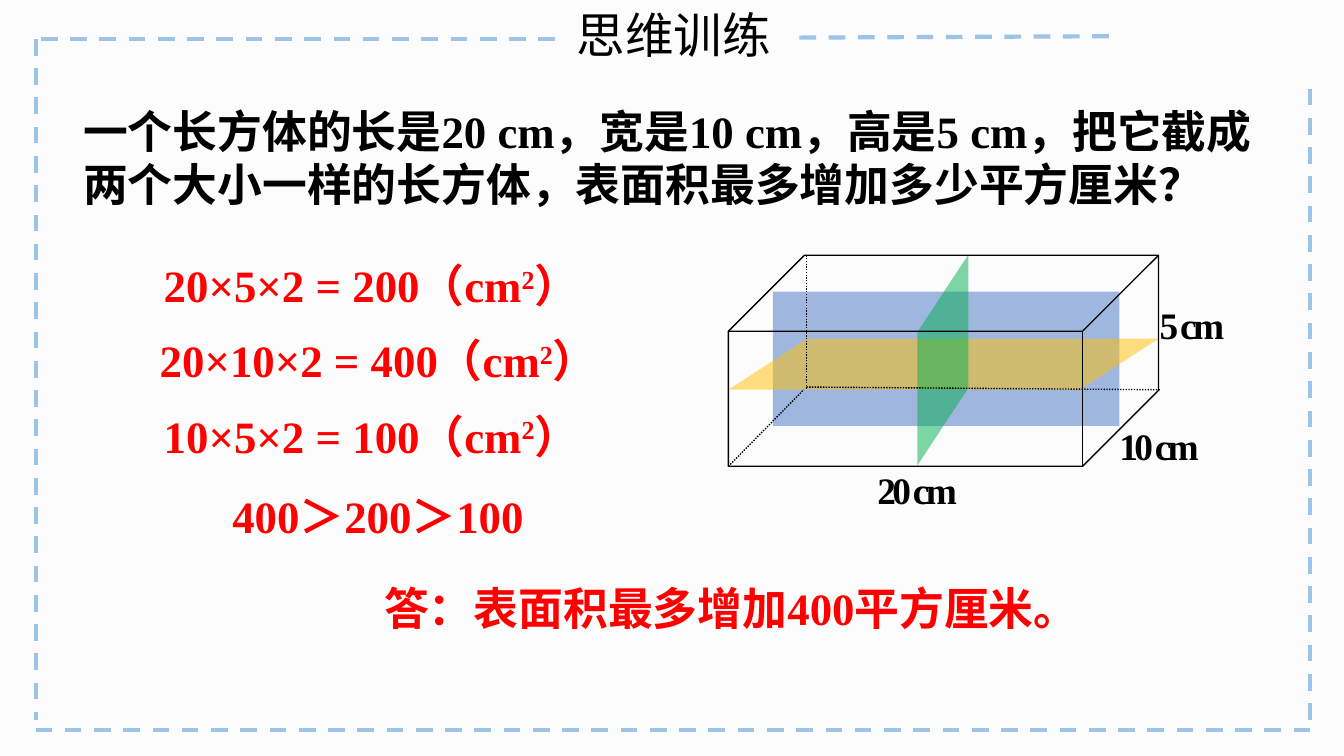
from typing import NamedTuple

from lxml import etree
from pptx import Presentation
from pptx.dml.color import RGBColor
from pptx.enum.dml import MSO_LINE
from pptx.enum.shapes import MSO_CONNECTOR, MSO_SHAPE
from pptx.enum.text import MSO_ANCHOR, MSO_AUTO_SIZE, PP_ALIGN
from pptx.oxml.ns import qn
from pptx.util import Inches, Pt

STRAIGHT = MSO_CONNECTOR.STRAIGHT
DASH, DOT = MSO_LINE.DASH, MSO_LINE.ROUND_DOT
RECT, SLANT, CUBE = MSO_SHAPE.RECTANGLE, MSO_SHAPE.PARALLELOGRAM, MSO_SHAPE.CUBE
TOP, LEFT = MSO_ANCHOR.TOP, PP_ALIGN.LEFT
NO_FIT = MSO_AUTO_SIZE.NONE

BLACK = RGBColor(0, 0, 0)
RED = RGBColor(255, 0, 0)
PAPER = RGBColor(0xFC, 0xFC, 0xFC)
SKY = RGBColor(0x9D, 0xC3, 0xE6)
BLUE = RGBColor(0x44, 0x72, 0xC4)
GOLD = RGBColor(0xFF, 0xC0, 0)
GREEN = RGBColor(0, 0xB0, 0x50)
SERIF = "Times New Roman"
HAN = "Noto Sans CJK SC"


class Box(NamedTuple):
    x: float
    y: float
    w: float
    h: float


class Edge(NamedTuple):
    x1: float
    y1: float
    x2: float
    y2: float


class Plane(NamedTuple):
    kind: int
    box: Box
    color: RGBColor
    skew: float = 0
    turn: int = 0


class Label(NamedTuple):
    text: str
    box: Box
    size: int
    color: RGBColor
    gap: int = 0


class Sum(NamedTuple):
    x: float
    left: str
    total: str


FRAME = [
    Edge(0.27, 0.29, 0.27, 5.36),
    Edge(9.75, 0.66, 9.75, 5.43),
    Edge(9.75, 5.43, 0.27, 5.43),
    Edge(8.25, 0.27, 5.92, 0.28),
    Edge(4.13, 0.29, 0.27, 0.29),
]
HIDDEN = [
    Edge(6, 2.88, 8.63, 2.9),
    Edge(6, 1.9, 6, 2.9),
    Edge(5.42, 3.47, 5.98, 2.9),
]
PLANES = [
    Plane(RECT, Box(5.75, 2.17, 2.58, 1), BLUE),
    Plane(SLANT, Box(5.42, 2.52, 3.2, 0.38), GOLD, 1.54),
    Plane(SLANT, Box(6.23, 2.49, 1.57, 0.38), GREEN, 1.52, 90),
]
TASK = ("一个长方体的长是20 cm，宽是10 cm，高是5 cm，把它"
        "截成两个大小一样的长方体，表面积最多增加多少平方厘米？")
LABELS = [
    Label(TASK, Box(0.52, 0.72, 9.02, 0.91), 24, BLACK),
    Label("20 cm", Box(6.43, 3.43, 0.79, 0.44), 20, BLACK, -2),
    Label("10 cm", Box(8.23, 3.1, 0.79, 0.44), 20, BLACK, -2),
    Label("5 cm", Box(8.53, 2.2, 0.79, 0.44), 20, BLACK, -2),
    Label("400＞200＞100", Box(1.63, 3.59, 2.91, 0.5), 24, RED),
    Label("答：表面积最多增加400平方厘米。", Box(2.76, 4.27, 5.32, 0.5), 24, RED),
]
SUMS = [
    Sum(1.12, "20×5×", "200"),
    Sum(1.09, "20×10×", "400"),
    Sum(1.12, "10×5×", "100"),
]


def write(para, text: str, *, size: int = 24, color: RGBColor = RED,
          bold: bool = True, face: str = SERIF, gap: int = 0, rise: int = 0) -> None:
    run = para.add_run()
    run.text = text
    font = run.font
    font.size, font.bold, font.name = Pt(size), bold, face
    font.color.rgb = color
    props = run._r.get_or_add_rPr()
    if gap:
        props.set("spc", str(gap * 100))
    if rise:
        props.set("baseline", str(rise * 1000))
    etree.SubElement(props, qn("a:ea")).set("typeface", HAN)


def add_text(slide, box: Box):
    frame = slide.shapes.add_textbox(*map(Inches, box)).text_frame
    frame.word_wrap = True
    return frame.paragraphs[0]


def add_line(slide, edge: Edge, color: RGBColor, width: float, dash: int) -> None:
    line = slide.shapes.add_connector(STRAIGHT, *map(Inches, edge))
    line.line.color.rgb = color
    line.line.width = Pt(width)
    line.line.dash_style = dash
    etree.SubElement(line._element.spPr, qn("a:effectLst"))


def add_plane(slide, plane: Plane) -> None:
    shape = slide.shapes.add_shape(plane.kind, *map(Inches, plane.box))
    shape.shadow.inherit = False
    shape.fill.solid()
    shape.fill.fore_color.rgb = plane.color
    tint = shape._element.spPr.find(qn("a:solidFill"))[0]
    etree.SubElement(tint, qn("a:alpha")).set("val", "50000")
    shape.line.fill.background()
    if plane.skew:
        shape.adjustments[0] = plane.skew
    if plane.turn:
        shape.rotation = plane.turn
        shape._element.spPr.find(qn("a:xfrm")).set("flipH", "1")


def add_cube(slide, box: Box) -> None:
    cube = slide.shapes.add_shape(CUBE, *map(Inches, box))
    cube.shadow.inherit = False
    cube.adjustments[0] = 0.36
    cube.fill.background()
    cube.line.color.rgb = BLACK
    cube.line.width = Pt(0.75)


def add_title(slide, text: str, box: Box) -> None:
    title = slide.shapes.title
    title.left, title.top, title.width, title.height = map(Inches, box)
    frame = title.text_frame
    frame.auto_size = NO_FIT
    frame.vertical_anchor = TOP
    para = frame.paragraphs[0]
    para.alignment = LEFT
    write(para, text, size=26, color=BLACK, bold=False, face=HAN)


def add_sum(slide, item: Sum, y: float) -> None:
    para = add_text(slide, Box(item.x, y, 4.46, 0.5))
    para.alignment = LEFT
    write(para, item.left)
    write(para, "2=", gap=6)
    write(para, f"{item.total}（cm")
    write(para, "2", rise=30)
    write(para, "）")


def main() -> None:
    deck = Presentation()
    deck.slide_width = Inches(10)
    deck.slide_height = deck.slide_width * 9 // 16
    slide = deck.slides.add_slide(deck.slide_layouts[5])
    slide.background.fill.solid()
    slide.background.fill.fore_color.rgb = PAPER
    add_title(slide, "思维训练", Box(4.19, -0.01, 1.73, 0.54))
    for edge in FRAME:
        add_line(slide, edge, SKY, 2.25, DASH)
    for plane in PLANES:
        add_plane(slide, plane)
    add_cube(slide, Box(5.42, 1.9, 3.2, 1.57))
    for edge in HIDDEN:
        add_line(slide, edge, BLACK, 0.75, DOT)
    for label in LABELS:
        para = add_text(slide, label.box)
        write(para, label.text, size=label.size, color=label.color, gap=label.gap)
    for row, item in enumerate(SUMS):
        add_sum(slide, item, 1.87 + row * 0.56)
    deck.save("out.pptx")


if __name__ == "__main__":
    main()
